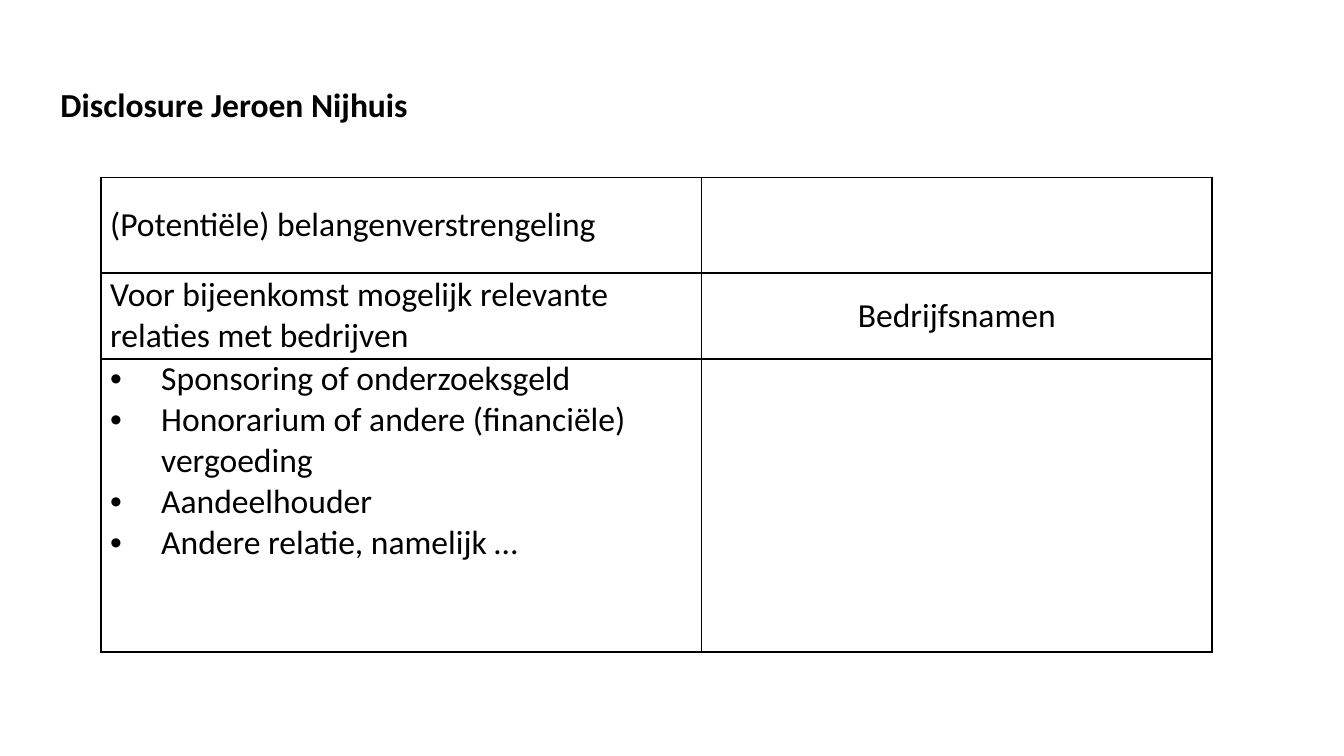
from lxml.etree import SubElement
from pptx import Presentation
from pptx.dml.color import RGBColor
from pptx.enum.text import MSO_ANCHOR, MSO_AUTO_SIZE, PP_ALIGN
from pptx.oxml.ns import qn
from pptx.util import Inches, Pt

COLOURS = {"ink": "000000", "paper": "FFFFFF"}
TEXT_FORMAT = {"name": "Calibri", "size": Pt(18), "bold": False}
TITLE_FORMAT = {**TEXT_FORMAT, "bold": True}
CELL_FORMAT = {
    "margin_left": Inches(0.07),
    "margin_right": Inches(0.07),
    "margin_top": 0,
    "margin_bottom": 0,
}
COLUMN_WIDTHS = [4.47, 3.8]
ROW_HEIGHTS = [0.71, 0.64, 2.18]
RELATIONS = [
    "Sponsoring of onderzoeksgeld",
    "Honorarium of andere (financiële) vergoeding",
    "Aandeelhouder",
    "Andere relatie, namelijk …",
]


def apply_format(target, values):
    for name, value in values.items():
        setattr(target, name, value)


def write(para, text, values):
    span = para.add_run()
    span.text = text
    apply_format(span.font, values)
    span.font.color.rgb = RGBColor.from_string(COLOURS["ink"])


def add_title(page, text):
    title = page.shapes.title
    apply_format(title, {"left": Inches(0.35), "top": Inches(0.56),
                         "width": Inches(9.31), "height": Inches(0.43)})
    frame = title.text_frame
    frame.auto_size = MSO_AUTO_SIZE.NONE
    frame.vertical_anchor = MSO_ANCHOR.MIDDLE
    para = frame.paragraphs[0]
    para.alignment = PP_ALIGN.LEFT
    write(para, text, TITLE_FORMAT)


def add_borders(cell):
    properties = cell._tc.get_or_add_tcPr()
    for position, side in enumerate(("lnL", "lnR", "lnT", "lnB")):
        line = SubElement(properties, qn(f"a:{side}"), w=str(Pt(1)))
        fill = SubElement(line, qn("a:solidFill"))
        SubElement(fill, qn("a:srgbClr"), val=COLOURS["ink"])
        # Borders come before the cell fill
        properties.insert(position, line)


def add_bullet(para):
    properties = para._p.get_or_add_pPr()
    properties.set("marL", str(Inches(0.38)))
    properties.set("indent", str(-Inches(0.38)))
    SubElement(properties, qn("a:buFont"), typeface="Arial")
    SubElement(properties, qn("a:buChar"), char="•")


def fill_cell(cell, lines, anchor=MSO_ANCHOR.MIDDLE, align=PP_ALIGN.LEFT, bullets=False):
    cell.vertical_anchor = anchor
    frame = cell.text_frame
    for number, text in enumerate(lines):
        para = frame.add_paragraph() if number else frame.paragraphs[0]
        para.alignment = align
        if bullets:
            add_bullet(para)
        write(para, text, TEXT_FORMAT)


def add_disclosure_table(page):
    frame = page.shapes.add_table(
        len(ROW_HEIGHTS), len(COLUMN_WIDTHS), Inches(0.75), Inches(1.32),
        Inches(sum(COLUMN_WIDTHS)), Inches(sum(ROW_HEIGHTS)))
    table = frame.table
    apply_format(table, {"first_row": False, "horz_banding": False})
    for column, width in zip(table.columns, COLUMN_WIDTHS):
        column.width = Inches(width)
    for row, height in zip(table.rows, ROW_HEIGHTS):
        row.height = Inches(height)
    for cell in table.iter_cells():
        apply_format(cell, CELL_FORMAT)
        cell.fill.solid()
        cell.fill.fore_color.rgb = RGBColor.from_string(COLOURS["paper"])
        add_borders(cell)
    return table


def main():
    # Widescreen page, 16:9
    deck = Presentation()
    deck.slide_width = Inches(10)
    deck.slide_height = deck.slide_width * 9 // 16
    page = deck.slides.add_slide(deck.slide_layouts[5])

    # Heading
    add_title(page, "Disclosure Jeroen Nijhuis")

    # Disclosure table
    table = add_disclosure_table(page)
    fill_cell(table.cell(0, 0), ["(Potentiële) belangenverstrengeling"])
    fill_cell(table.cell(1, 0), ["Voor bijeenkomst mogelijk relevante relaties met bedrijven"])
    fill_cell(table.cell(1, 1), ["Bedrijfsnamen"], align=PP_ALIGN.CENTER)
    fill_cell(table.cell(2, 0), RELATIONS, anchor=MSO_ANCHOR.TOP, bullets=True)

    deck.save("out.pptx")


if __name__ == "__main__":
    main()
